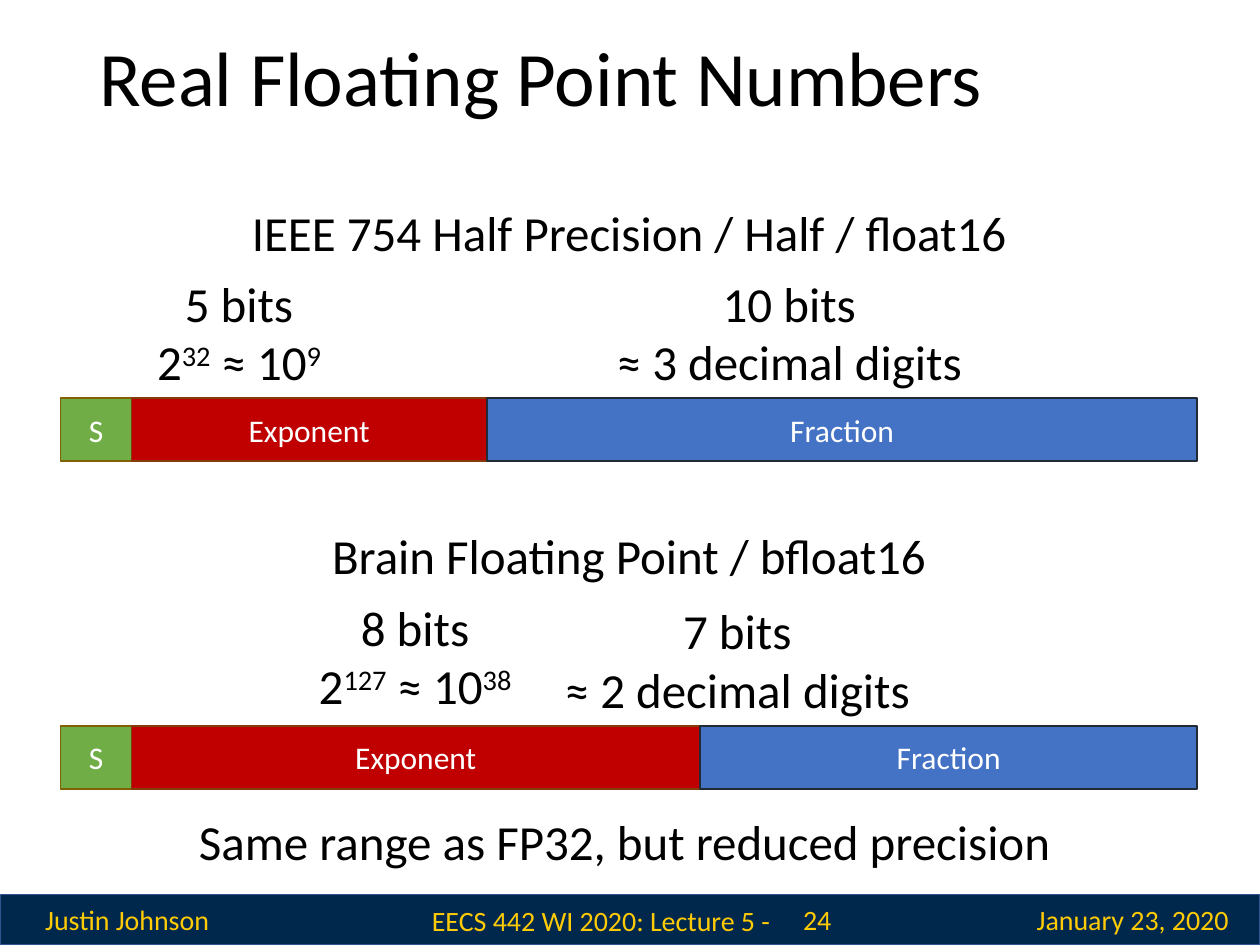
from dataclasses import dataclass

from lxml import etree
from pptx import Presentation
from pptx.dml.color import RGBColor
from pptx.enum.shapes import MSO_SHAPE
from pptx.enum.text import MSO_ANCHOR, PP_ALIGN
from pptx.util import Pt

RECTANGLE = MSO_SHAPE.RECTANGLE
TOP, MIDDLE = MSO_ANCHOR.TOP, MSO_ANCHOR.MIDDLE
LEFT, CENTER = PP_ALIGN.LEFT, PP_ALIGN.CENTER
BLANK_LAYOUT = 6


@dataclass(frozen=True)
class Theme:
    font: str = "Calibri"
    ink: str = "000000"
    white: str = "FFFFFF"
    footer_fill: str = "00274C"
    footer_line: str = "325491"
    footer_ink: str = "FFCB05"
    title_size: int = 44
    body_size: int = 28
    field_size: int = 18
    footer_size: int = 16


THEME = Theme()

# Bar geometry, in points: every bit has the same width
BAR_LEFT, BIT_WIDTH, BAR_HEIGHT = 34.6, 40.6, 36
BAR_WIDTH = 16 * BIT_WIDTH

# Field name, fill, line
FIELDS = (
    ("S", "70AD47", "806000"),
    ("Exponent", "C00000", "843C0B"),
    ("Fraction", "4472C4", "222A35"),
)

# Heading and top, bit counts, bar top, labels as (left, top, width, lines).
# A line is a list of runs; a run in a tuple is superscript.
FORMATS = (
    ("IEEE 754 Half Precision / Half / float16", 112.2, (1, 5, 10), 227.6, (
        (55.3, 152.5, 162.5, [["5 bits"], ["2", ("32",), " ≈ 10", ("9",)]]),
        (217.5, 152.5, 467, [["10 bits"], ["≈ 3 decimal digits"]]),
    )),
    ("Brain Floating Point / bfloat16", 296.5, (1, 8, 7), 414.8, (
        (151.2, 337.7, 172, [["8 bits"], ["2", ("127",), " ≈ 10", ("38",)]]),
        (157.8, 339.7, 527, [["7 bits"], ["≈ 2 decimal digits"]]),
    )),
)

# Footer text, left, top, width, height
FOOTER = (
    ("Justin Johnson", 0.7, 511.2, 144, 28.8),
    ("January 23, 2020", 575.3, 512, 144, 26.6),
    ("EECS 442 WI 2020: Lecture 5 -", 236, 512.6, 215, 26.6),
    ("24", 435.5, 511.2, 63, 28.8),
)


def rgb(color):
    return RGBColor.from_string(color)


def write_lines(frame, lines, size, color, align=CENTER, anchor=TOP):
    """Fill a text frame run by run, one paragraph a line."""
    frame.word_wrap = True
    frame.vertical_anchor = anchor
    for index, line in enumerate(lines):
        para = frame.add_paragraph() if index else frame.paragraphs[0]
        para.alignment = align
        for piece in line:
            raised = isinstance(piece, tuple)
            span = para.add_run()
            span.text = piece[0] if raised else piece
            span.font.name = THEME.font
            span.font.size = Pt(size)
            span.font.color.rgb = rgb(color)
            if raised:
                span._r.get_or_add_rPr().set("baseline", "30000")


def add_text(page, lines, left, top, width, height, size=THEME.body_size,
             color=THEME.ink, **placing):
    box = page.shapes.add_textbox(Pt(left), Pt(top), Pt(width), Pt(height))
    write_lines(box.text_frame, lines, size, color, **placing)
    return box


def add_block(page, left, top, width, height, fill, line):
    block = page.shapes.add_shape(
        RECTANGLE, Pt(left), Pt(top), Pt(width), Pt(height))
    block.shadow.inherit = False
    block.fill.solid()
    block.fill.fore_color.rgb = rgb(fill)
    block.line.color.rgb = rgb(line)
    block.line.width = Pt(1)
    return block


def add_bit_bar(page, bits, top):
    """Sign, exponent and fraction side by side, as wide as their bits."""
    left = BAR_LEFT
    for (name, fill, line), count in zip(FIELDS, bits):
        width = count * BIT_WIDTH
        block = add_block(page, left, top, width, BAR_HEIGHT, fill, line)
        write_lines(block.text_frame, [[name]], THEME.field_size, THEME.white,
                    anchor=MIDDLE)
        left += width


def add_format(page, heading, heading_top, bits, bar_top, labels):
    add_text(page, [[heading]], BAR_LEFT, heading_top, BAR_WIDTH, 41.2)
    add_bit_bar(page, bits, bar_top)
    for left, top, width, lines in labels:
        add_text(page, lines, left, top, width, 75)


def add_footer(page):
    add_block(page, 0, 511.2, 720, 28.8, THEME.footer_fill, THEME.footer_line)
    for text, *place in FOOTER:
        add_text(page, [[text]], *place, size=THEME.footer_size,
                 color=THEME.footer_ink, anchor=MIDDLE)


def main():
    deck = Presentation()
    deck.slide_width, deck.slide_height = Pt(720), Pt(540)
    page = deck.slides.add_slide(deck.slide_layouts[BLANK_LAYOUT])

    # Footer band and title
    add_footer(page)
    title = add_text(page, [["Real Floating Point Numbers"]], 49.7, 14.4, 620.6,
                     64.8, size=THEME.title_size, align=LEFT, anchor=MIDDLE)
    title.text_frame.paragraphs[0].line_spacing = 0.9

    # The two 16-bit formats
    for number_format in FORMATS:
        add_format(page, *number_format)

    # Conclusion
    closing = add_text(page, [["Same range as FP32, but reduced precision"]],
                       106.6, 460, 507, 41.2, align=LEFT)
    closing.text_frame.word_wrap = False

    deck.save("out.pptx")


if __name__ == "__main__":
    main()
